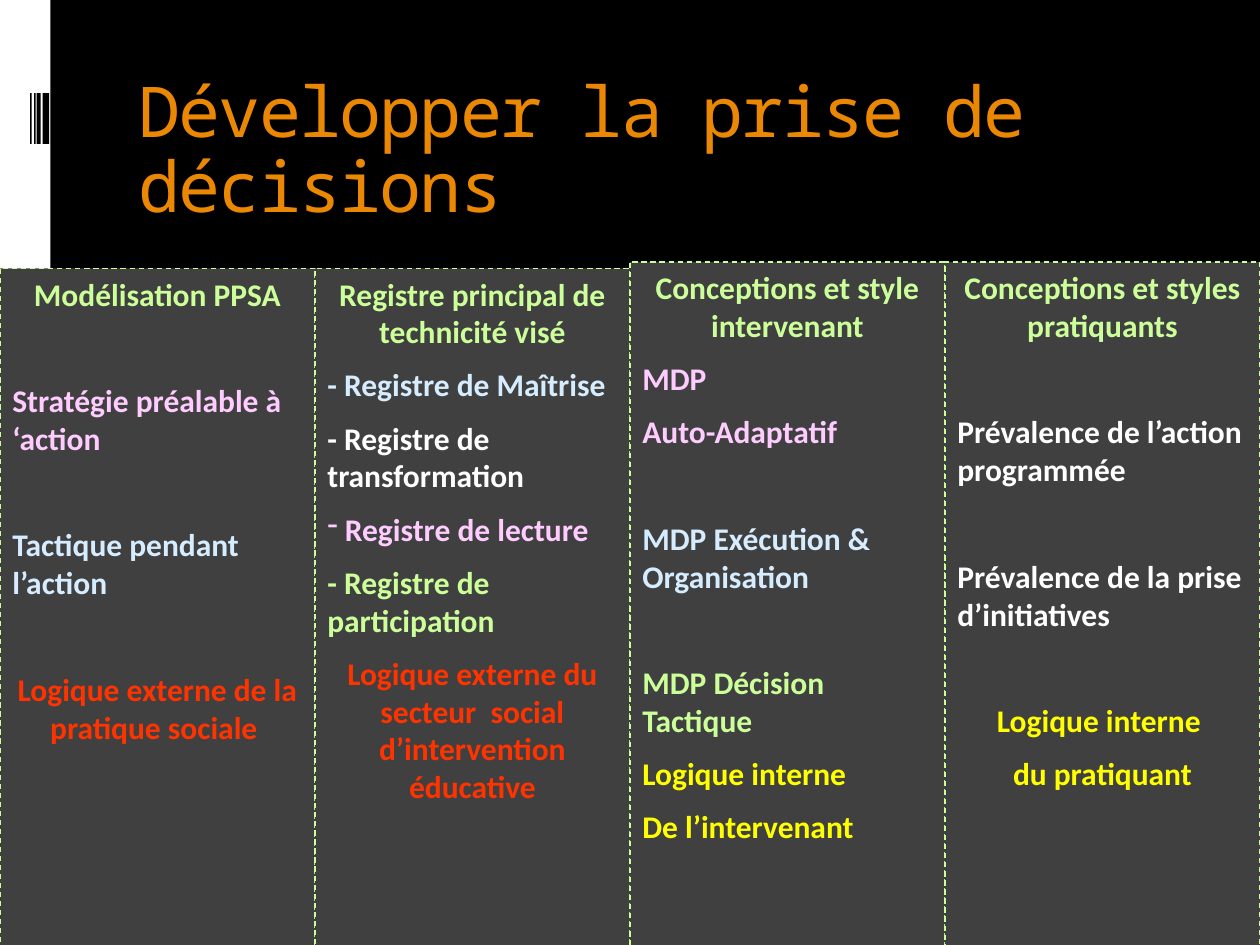
from dataclasses import dataclass

from lxml.etree import SubElement
from pptx import Presentation
from pptx.dml.color import RGBColor
from pptx.enum.dml import MSO_LINE
from pptx.enum.shapes import MSO_SHAPE
from pptx.enum.text import MSO_ANCHOR, PP_ALIGN
from pptx.oxml.ns import qn
from pptx.util import Cm, Pt

TITLE = "Développer la prise de décisions"

# Each line: text, colour, style letters
# (c = centred, g = wide gap above, d = dash bullet)
COLUMNS = [
    (5.41, 14.78, [
        ("Modélisation PPSA", "green", "c"),
        ("Stratégie préalable à ‘action", "pink", "g"),
        ("Tactique pendant l’action", "blue", "g"),
        ("Logique externe de la pratique sociale ", "red", "cg"),
    ]),
    (5.41, 15.54, [
        ("Registre principal de technicité visé", "green", "c"),
        ("- Registre de Maîtrise", "blue", ""),
        ("- Registre de transformation", "white", ""),
        (" Registre de lecture", "pink", "d"),
        ("- Registre de participation", "green", ""),
        ("Logique externe du secteur  social d’intervention éducative", "red", "c"),
    ]),
    (5.28, 14.43, [
        ("Conceptions et style intervenant", "green", "c"),
        ("MDP", "pink", ""),
        ("Auto-Adaptatif", "pink", ""),
        ("MDP Exécution & Organisation", "blue", "g"),
        ("MDP Décision Tactique", "green", "g"),
        ("Logique interne", "yellow", ""),
        ("De l’intervenant", "yellow", ""),
    ]),
    (5.28, 15.95, [
        ("Conceptions et styles pratiquants", "green", "c"),
        ("Prévalence de l’action programmée", "white", "g"),
        ("Prévalence de la prise d’initiatives", "white", "g"),
        ("Logique interne ", "yellow", "cg"),
        ("du pratiquant", "yellow", "c"),
    ]),
]
BARS = [(0.86, 0.13), (0.74, 0.08), (0.69, 0.03), (0.61, 0.03)]  # left, width
WIDE = 6.35


@dataclass(frozen=True)
class Theme:
    black: str = "000000"
    white: str = "FFFFFF"
    dusk: str = "5B77A8"
    orange: str = "EB8803"
    panel: str = "404040"
    green: str = "CCFF99"
    pink: str = "FFCCFF"
    blue: str = "D6ECFF"
    red: str = "FF3300"
    yellow: str = "FFFF00"
    head_font: str = "Noto Sans Mono"
    body_font: str = "Calibri"
    head: float = 40
    body: float = 18
    near: float = 8.8
    far: float = 39.3

    def tint(self, name):
        return RGBColor.from_string(getattr(self, name))


THEME = Theme()


def add_run(para, text, font, size, color, bold=False):
    run = para.add_run()
    run.text = text
    run.font.name, run.font.size, run.font.bold = font, Pt(size), bold
    run.font.color.rgb = THEME.tint(color)
    return run


def add_rect(slide, left, top, width, height, color):
    rect = slide.shapes.add_shape(
        MSO_SHAPE.RECTANGLE, Cm(left), Cm(top), Cm(width), Cm(height))
    rect.shadow.inherit = False
    rect.fill.solid()
    rect.fill.fore_color.rgb = THEME.tint(color)
    rect.line.fill.background()
    return rect


def add_title(slide):
    box = slide.shapes.add_textbox(Cm(2.54), Cm(1.42), Cm(21.59), Cm(2.54))
    box.text_frame.word_wrap = True
    para = box.text_frame.paragraphs[0]
    para.line_spacing = 0.9
    run = add_run(para, TITLE, THEME.head_font, THEME.head, "orange")
    run.font._element.set("spc", "-100")


def add_column(slide, left, top, height, lines):
    rect = add_rect(slide, left, top, WIDE, height, "panel")
    rect.line.color.rgb = THEME.tint("green")
    rect.line.width = Pt(0.75)
    rect.line.dash_style = MSO_LINE.DASH
    frame = rect.text_frame
    frame.word_wrap = True
    frame.vertical_anchor = MSO_ANCHOR.TOP
    for i, (text, color, style) in enumerate(lines):
        para = frame.add_paragraph() if i else frame.paragraphs[0]
        para.alignment = PP_ALIGN.CENTER if "c" in style else PP_ALIGN.LEFT
        if i:
            para.space_before = Pt(THEME.far if "g" in style else THEME.near)
        if "d" in style:
            props = para._p.get_or_add_pPr()
            SubElement(props, qn("a:buChar")).set("char", "-")
        add_run(para, text, THEME.body_font, THEME.body, color, True)


def main():
    deck = Presentation()
    deck.slide_width, deck.slide_height = Cm(25.4), Cm(19.05)
    slide = deck.slides.add_slide(deck.slide_layouts[6])

    fill = slide.background.fill
    fill.gradient()
    fill.gradient_angle = 270
    for stop, (place, color) in zip(
            fill.gradient_stops, [(0.65, "black"), (1, "dusk")]):
        stop.position = place
        stop.color.rgb = THEME.tint(color)

    add_rect(slide, 0, 0, 1.02, 19.05, "white")
    for left, width in BARS:
        add_rect(slide, left, 1.88, width, 1.02, "black")
    add_title(slide)
    for i, (top, height, lines) in enumerate(COLUMNS):
        add_column(slide, i * WIDE, top, height, lines)
    deck.save("out.pptx")


if __name__ == "__main__":
    main()
